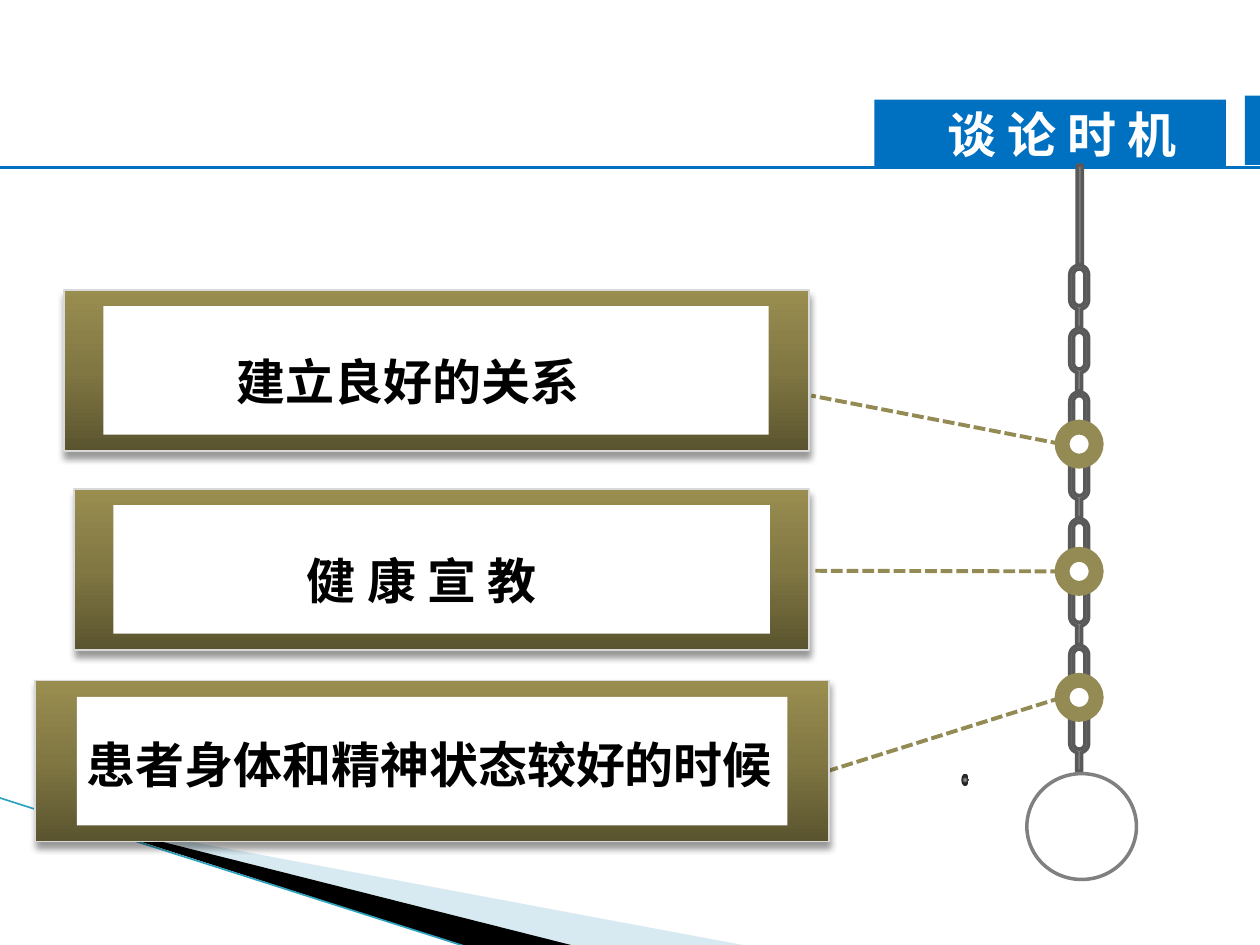
"""Build a slide on choosing the right time to talk, with three cards tied to a chain."""
import math

import pptx
import pptx.dml.color
import pptx.enum.dml
import pptx.enum.shapes
import pptx.enum.text
import pptx.oxml
import pptx.oxml.ns
import pptx.util

Inches = pptx.util.Inches
Pt = pptx.util.Pt
SHAPE = pptx.enum.shapes.MSO_SHAPE
qn = pptx.oxml.ns.qn

BLUE, OLIVE, GREY, DARK_GREY, WHITE = "0070C0", "948A54", "808080", "595959", "FFFFFF"
CHINESE_FONT = "Noto Sans CJK SC"
CARD_STOPS = [(0, "5A542F"), (50, "817743"), (100, "998D4F")]
CHAIN_X = 8.565
CARDS = [
    ((0.51, 2.3, 5.91), (0.82, 5.28), "建立良好的关系", (1.78, 2.6, 3.15, 0.63), False),
    ((0.59, 3.88, 5.83), (0.9, 5.21), "健 康 宣 教", (1.77, 4.18, 3.15, 0.63), True),
    ((0.28, 5.4, 6.3), (0.61, 5.64), "患者身体和精神状态较好的时候", (0.59, 5.64, 5.75, 0.71), False),
]


def color(value):
    """Turn a hex string into a colour."""
    return pptx.dml.color.RGBColor.from_string(value)


def xml(text):
    """Parse a drawing element written with the a: prefix."""
    head, mark, tail = text.partition(">")
    if head.endswith("/"):
        head, mark = head[:-1], "/>"
    return pptx.oxml.parse_xml(f"{head} {pptx.oxml.ns.nsdecls('a')}{mark}{tail}")


def paint(shape, fill=None, line=None, width=1):
    """Give a shape a plain fill and outline without a shadow."""
    shape.shadow.inherit = False
    if fill:
        shape.fill.solid()
        shape.fill.fore_color.rgb = color(fill)
    if line:
        shape.line.color.rgb = color(line)
        shape.line.width = Pt(width)
    else:
        shape.line.fill.background()
    return shape


def add_preset(slide, kind, place, fill=None, line=None, width=1):
    """Add a preset shape at left, top, width, height."""
    shape = slide.shapes.add_shape(kind, *map(Inches, place))
    return paint(shape, fill, line, width)


def add_outline(slide, contours, fill, line=None, width=1):
    """Add a closed freeform made of one or more contours."""
    builder = None
    for contour in contours:
        points = [(Inches(x), Inches(y)) for x, y in contour]
        if builder is None:
            builder = slide.shapes.build_freeform(*points[0], scale=1.0)
        else:
            builder.move_to(*points[0])
        builder.add_line_segments(points[1:], close=True)
    return paint(builder.convert_to_shape(), fill, line, width)


def add_line(slide, start, end, line, width, dashed=False):
    """Add a straight connector."""
    kind = pptx.enum.shapes.MSO_CONNECTOR.STRAIGHT
    connector = slide.shapes.add_connector(kind, *map(Inches, start + end))
    connector.line.color.rgb = color(line)
    connector.line.width = Pt(width)
    if dashed:
        connector.line.dash_style = pptx.enum.dml.MSO_LINE.SQUARE_DOT
    connector._element.spPr.append(xml("<a:effectLst/>"))


def set_gradient(shape, stops, direction):
    """Fill a shape with colour stops and a direction element."""
    shape.fill.gradient()
    gradient = shape._element.spPr.find(qn("a:gradFill"))
    for child in list(gradient):
        gradient.remove(child)
    items = "".join(
        f'<a:gs pos="{place * 1000}"><a:srgbClr val="{value}"/></a:gs>' for place, value in stops
    )
    gradient.append(xml(f"<a:gsLst>{items}</a:gsLst>"))
    gradient.append(xml(direction))


def set_shadow(shape):
    """Give a shape a soft shadow below it."""
    shape._element.spPr.find(qn("a:effectLst")).append(xml(
        f'<a:outerShdw blurRad="{Pt(4)}" dist="{Pt(3)}" dir="5400000" algn="t" rotWithShape="0">'
        '<a:srgbClr val="000000"><a:alpha val="40000"/></a:srgbClr></a:outerShdw>'
    ))


def write(shape, text, font, value, centered):
    """Write one bold line of text into a shape."""
    para = shape.text_frame.paragraphs[0]
    align = pptx.enum.text.PP_ALIGN
    para.alignment = align.CENTER if centered else align.LEFT
    span = para.add_run()
    span.text = text
    span.font.size = Pt(28)
    span.font.bold = True
    span.font.color.rgb = color(value)
    span.font.name = font
    span.font._element.append(xml(f'<a:ea typeface="{CHINESE_FONT}"/>'))
    return para


def arc(center_y, radius, first, last):
    """List points on an arc around the chain axis, angles in degrees."""
    angles = [math.radians(first + (last - first) * step / 12) for step in range(13)]
    return [(CHAIN_X + radius * math.cos(a), center_y + radius * math.sin(a)) for a in angles]


def add_link(slide, top):
    """Add one chain link with its hole and the stem below it."""
    hole = arc(top + 0.08, 0.045, 180, 360) + arc(top + 0.28, 0.045, 0, 180)
    stem = [(CHAIN_X + 0.02, top + 0.5), (CHAIN_X - 0.02, top + 0.5)]
    rim = arc(top + 0.08, 0.075, 180, 360) + arc(top + 0.28, 0.075, 0, 75)
    rim += stem + arc(top + 0.28, 0.075, 105, 180)
    add_outline(slide, [hole, rim], GREY, DARK_GREY, 2)


def add_backdrop(slide):
    """Draw the wedges in the lower left corner and the rule."""
    pale = add_outline(slide, [[(0.55, 6.5), (5.95, 7.51), (4.56, 7.51)]], "9DCADC")
    tint = pale._element.spPr.find(qn("a:solidFill")).find(qn("a:srgbClr"))
    tint.append(xml('<a:alpha val="40000"/>'))
    add_outline(slide, [[(0.53, 6.49), (4.57, 7.51), (3.72, 7.52)]], "000000")
    add_line(slide, (-0.01, 6.33), (3.72, 7.52), "2DA2BF", 0.95)
    add_line(slide, (0, 1.33), (10, 1.33), BLUE, 2)


def add_heading(slide):
    """Add the heading tab and the small block beside it."""
    tab = add_preset(slide, SHAPE.RECTANGLE, (6.94, 0.79, 2.79, 0.55), BLUE)
    tab.text_frame.margin_left = Inches(0.29)
    tab.text_frame.vertical_anchor = pptx.enum.text.MSO_ANCHOR.MIDDLE
    write(tab, "谈 论 时 机", "Times New Roman", WHITE, True)
    add_preset(slide, SHAPE.RECTANGLE, (9.88, 0.76, 0.16, 0.55), BLUE)


def add_chain(slide):
    """Hang the chain with its weight, rings and dashed leads."""
    dot = add_preset(slide, SHAPE.OVAL, (7.63, 6.14, 0.06, 0.1))
    center = '<a:path path="circle"><a:fillToRect l="50000" t="50000" r="50000" b="50000"/></a:path>'
    set_gradient(dot, [(0, "A6A6A6"), (40, "262626")], center)
    add_preset(slide, SHAPE.ROUNDED_RECTANGLE, (8.55, 1.31, 0.04, 0.79), GREY, DARK_GREY, 2)
    for index in range(8):
        add_link(slide, 2.1 + index * 3.52 / 7)
    add_preset(slide, SHAPE.OVAL, (8.15, 6.14, 0.87, 0.84), WHITE, GREY, 2)
    ring_tops = (3.39, 4.4, 5.4)
    for top in ring_tops:
        add_preset(slide, SHAPE.OVAL, (8.43, top, 0.27, 0.27), WHITE, OLIVE, 8.5)
    for top, end_y in zip(ring_tops, (3.14, 4.53, 6.16)):
        add_line(slide, (8.43, top + 0.135), (6.44, end_y), OLIVE, 2.25, dashed=True)


def add_card(slide, frame, panel, text, text_place, centered):
    """Add a framed card with its line of text."""
    left, top, width = frame
    back = add_preset(slide, SHAPE.RECTANGLE, (left, top, width, 1.28), line="D9D9D9")
    set_gradient(back, CARD_STOPS, '<a:lin ang="16200000" scaled="0"/>')
    set_shadow(back)
    add_preset(slide, SHAPE.RECTANGLE, (panel[0], top + 0.13, panel[1], 1.02), WHITE)
    box = slide.shapes.add_textbox(*map(Inches, text_place))
    box.text_frame.word_wrap = True
    box.text_frame.auto_size = pptx.enum.text.MSO_AUTO_SIZE.SHAPE_TO_FIT_TEXT
    write(box, text, CHINESE_FONT, "000000", centered).line_spacing = 1.3


def main():
    """Build and save the deck."""
    deck = pptx.Presentation()
    deck.slide_width, deck.slide_height = Inches(10), Inches(7.5)
    slide = deck.slides.add_slide(deck.slide_layouts[6])
    add_backdrop(slide)
    add_heading(slide)
    add_chain(slide)
    for card in CARDS:
        add_card(slide, *card)
    deck.save("out.pptx")


if __name__ == "__main__":
    main()
